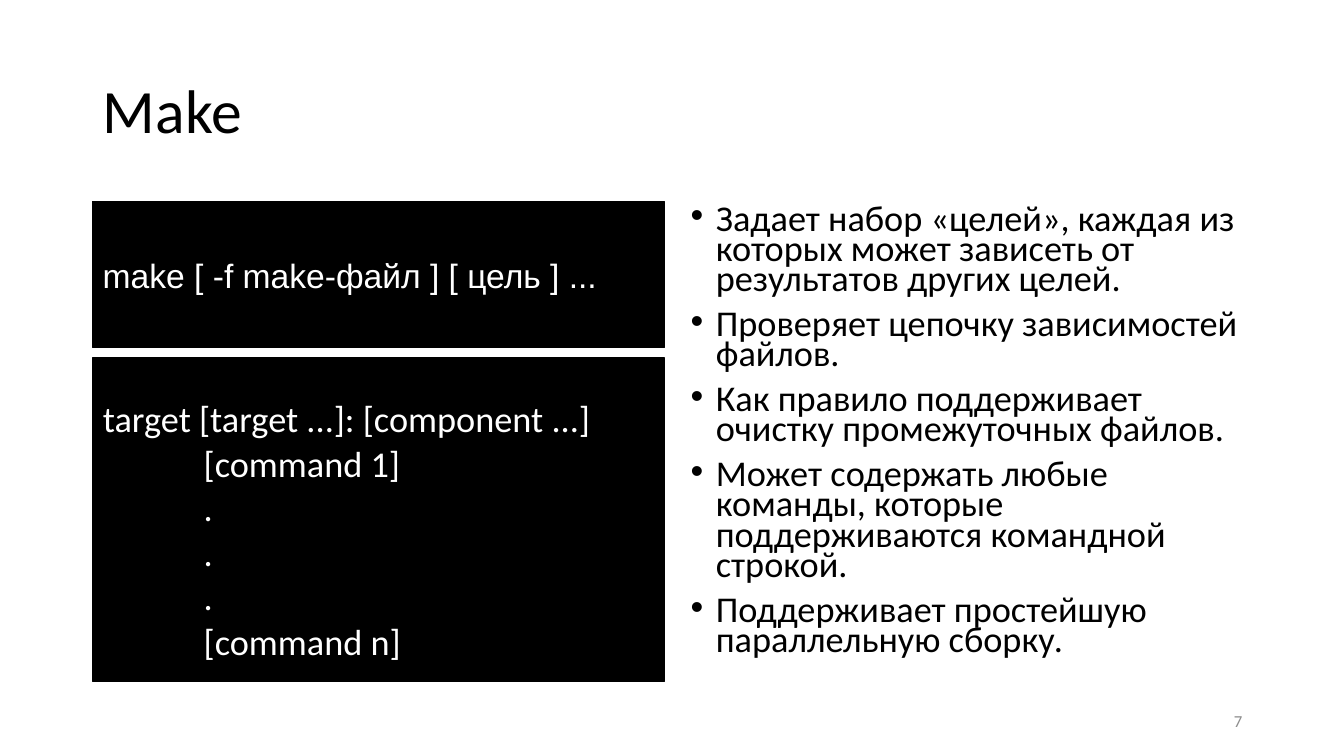
from pptx import Presentation
from pptx.dml.color import RGBColor
from pptx.enum.shapes import MSO_SHAPE
from pptx.enum.text import MSO_ANCHOR, MSO_AUTO_SIZE, PP_ALIGN
from pptx.oxml.ns import qn
from pptx.util import Inches, Pt

RECT = MSO_SHAPE.RECTANGLE
TOP, MIDDLE = MSO_ANCHOR.TOP, MSO_ANCHOR.MIDDLE
NO_FIT = MSO_AUTO_SIZE.NONE
LEFT, RIGHT = PP_ALIGN.LEFT, PP_ALIGN.RIGHT

COLORS = {"black": "000000", "white": "FFFFFF", "grey": "8C8C8C"}
BODY = {"line_spacing": 0.7, "space_before": Pt(10)}
BODY_SIZE = 25.9
COLUMN_WIDTH = 5.67
LEFT_X, RIGHT_X, COLUMN_Y = 0.92, 6.75, 2

SYNTAX = [
    ("target [target ...]: [component ...]", 0),
    ("[command 1]", 1),
    (".", 1),
    (".", 1),
    (".", 1),
    ("[command n]", 1),
]
FEATURES = [
    "Задает набор «целей», каждая из которых может зависеть от результатов других целей.",
    "Проверяет цепочку зависимостей файлов.",
    "Как правило поддерживает очистку промежуточных файлов.",
    "Может содержать любые команды, которые поддерживаются командной строкой.",
    "Поддерживает простейшую параллельную сборку.",
]


class SlideBuilder:
    """Holds the deck style and the current slide."""

    def __init__(self, prs):
        self.s = prs.slides.add_slide(prs.slide_layouts[3])

    def color(self, name):
        return RGBColor.from_string(COLORS[name])

    def place(self, sp, box):
        for name, value in zip(("left", "top", "width", "height"), box):
            setattr(sp, name, Inches(value))

    def frame(self, sp, anchor, top=0.05):
        tf = sp.text_frame
        values = {
            "word_wrap": True, "auto_size": NO_FIT, "vertical_anchor": anchor,
            "margin_left": Inches(0.1), "margin_right": Inches(0.1),
            "margin_top": Inches(top), "margin_bottom": Inches(0.05),
        }
        for name, value in values.items():
            setattr(tf, name, value)
        return tf

    def paragraph(self, p, text, size, color, font="Calibri", **values):
        for name, value in {"alignment": LEFT, **values}.items():
            setattr(p, name, value)
        r = p.add_run()
        r.text = text
        r.font.name, r.font.size = font, Pt(size)
        r.font.color.rgb = self.color(color)

    def indent(self, p, left, first=0, bullet=None):
        ppr = p._p.get_or_add_pPr()
        ppr.set("marL", str(Inches(left)))
        ppr.set("indent", str(Inches(first)))
        if bullet:
            ppr.makeelement(qn("a:buFont"))
            font = ppr.makeelement(qn("a:buFont"), {"typeface": "Arial"})
            char = ppr.makeelement(qn("a:buChar"), {"char": bullet})
            ppr.extend([font, char])
        else:
            ppr.append(ppr.makeelement(qn("a:buNone")))

    def paint(self, sp):
        sp.fill.solid()
        sp.fill.fore_color.rgb = self.color("black")
        sp.line.color.rgb = self.color("black")
        sp.line.width = Pt(1)

    def title(self, text, box):
        sp = self.s.shapes.title
        self.place(sp, box)
        p = self.frame(sp, MIDDLE).paragraphs[0]
        self.paragraph(p, text, 44, "black", line_spacing=0.9)

    def body(self, idx, rows, box, color, top=0.05):
        sp = self.s.placeholders[idx]
        self.place(sp, box)
        tf = self.frame(sp, TOP, top)
        for i, (text, *indent) in enumerate(rows):
            p = tf.add_paragraph() if i else tf.paragraphs[0]
            self.paragraph(p, text, BODY_SIZE, color, **BODY)
            self.indent(p, *indent)
        return sp

    def command(self, text, box):
        sp = self.s.shapes.add_shape(RECT, *map(Inches, box))
        sp.shadow.inherit = False
        self.paint(sp)
        p = self.frame(sp, MIDDLE).paragraphs[0]
        self.paragraph(p, text, 24, "white", "Arial")

    def number(self, text, box):
        sp = self.s.shapes.add_textbox(*map(Inches, box))
        p = self.frame(sp, MIDDLE).paragraphs[0]
        self.paragraph(p, text, 12, "grey", alignment=RIGHT)


def main():
    prs = Presentation()
    prs.slide_width, prs.slide_height = Inches(13.33), Inches(7.5)
    slide = SlideBuilder(prs)
    slide.title("Make", (LEFT_X, 0.4, 11.5, 1.45))
    syntax = slide.body(1, SYNTAX, (LEFT_X, 3.55, COLUMN_WIDTH, 3.21), "white", top=0.5)
    slide.paint(syntax)
    features = [(text, 0.25, -0.25, "•") for text in FEATURES]
    slide.body(2, features, (RIGHT_X, COLUMN_Y, COLUMN_WIDTH, 4.76), "black")
    slide.number("7", (9.42, 6.95, 3, 0.4))
    slide.command("make [ -f make-файл ] [ цель ] ...", (LEFT_X, COLUMN_Y, COLUMN_WIDTH, 1.45))
    prs.save("out.pptx")


if __name__ == "__main__":
    main()
